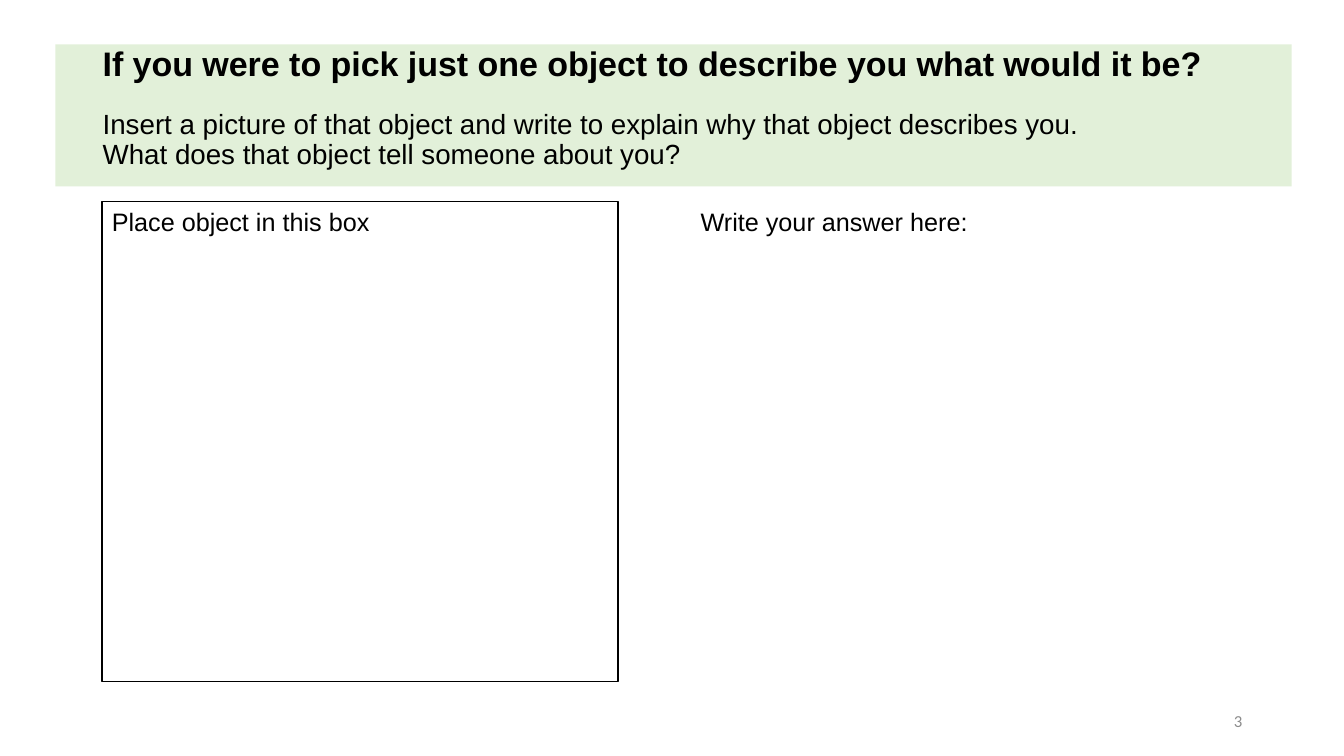
from pptx import Presentation
from pptx import util as u
from pptx.dml.color import RGBColor
from pptx.enum import shapes, text

WIDTH, HEIGHT = u.Inches(13.33), u.Inches(7.5)
LEFT, TOP, LABEL_HEIGHT = 7.58, 26.67, 5.33  # percent of the slide

HEADING = {"size": u.Pt(24.3), "name": "Arial", "bold": True}
PROMPT = {"size": u.Pt(19.8), "name": "Arial", "bold": False}
LABEL = {"size": u.Pt(18), "name": "Arial"}
NUMBER = {"size": u.Pt(12), "name": "Calibri"}


def color(value):
    return RGBColor.from_string(value)


def place(left, top, width, height):
    """Turn percentages of the slide into lengths."""
    return [round(share * side / 100) for share, side in
            zip((left, top, width, height), (WIDTH, HEIGHT) * 2)]


def set_all(target, values):
    for name, value in values.items():
        setattr(target, name, value)


def add_panel(page, area, fill, line=None):
    panel = page.shapes.add_shape(shapes.MSO_SHAPE.RECTANGLE, *place(*area))
    panel.shadow.inherit = False
    panel.fill.solid()
    panel.fill.fore_color.rgb = color(fill)
    if line:
        panel.line.color.rgb = color(line)
        panel.line.width = u.Pt(1)
    else:
        panel.line.fill.background()


def add_text(page, area, lines, frame=None, ink="000000"):
    """Write one paragraph for each (wording, font, paragraph format)."""
    box = page.shapes.add_textbox(*place(*area))
    set_all(box.text_frame, {"word_wrap": True, **(frame or {})})
    for index, (wording, font, layout) in enumerate(lines):
        para = box.text_frame.add_paragraph() if index else box.text_frame.paragraphs[0]
        set_all(para, layout)
        span = para.add_run()
        span.text = wording
        set_all(span.font, font)
        span.font.color.rgb = color(ink)


def main():
    deck = Presentation()
    deck.slide_width, deck.slide_height = WIDTH, HEIGHT
    page = deck.slides.add_slide(deck.slide_layouts[6])
    middle = {"vertical_anchor": text.MSO_ANCHOR.MIDDLE}
    tight = {"line_spacing": 0.9}

    add_panel(page, (4.13, 5.87, 91.97, 18.8), "E2F0D9")
    add_text(page, (6.9, 8, 86.27, 16.67), [
        ("If you were to pick just one object to describe you what would it be?",
         HEADING, tight),
        ("Insert a picture of that object and write to explain why that object describes you.",
         PROMPT, {**tight, "space_before": u.Pt(18.5)}),
        ("What does that object tell someone about you?", PROMPT, tight),
    ], {**middle, "margin_top": 0, "margin_bottom": u.Inches(0.29)})

    add_panel(page, (LEFT, TOP, 38.41, 63.47), "FFFFFF", "000000")
    for left, width, wording in ((LEFT, 39.38, "Place object in this box"),
                                 (51.39, 42.54, "Write your answer here:")):
        add_text(page, (left, TOP, width, LABEL_HEIGHT), [(wording, LABEL, {})])

    add_text(page, (70.67, 92.67, 22.5, LABEL_HEIGHT),
             [("3", NUMBER, {"alignment": text.PP_ALIGN.RIGHT})], middle, "8C8C8C")
    deck.save("out.pptx")


if __name__ == "__main__":
    main()
